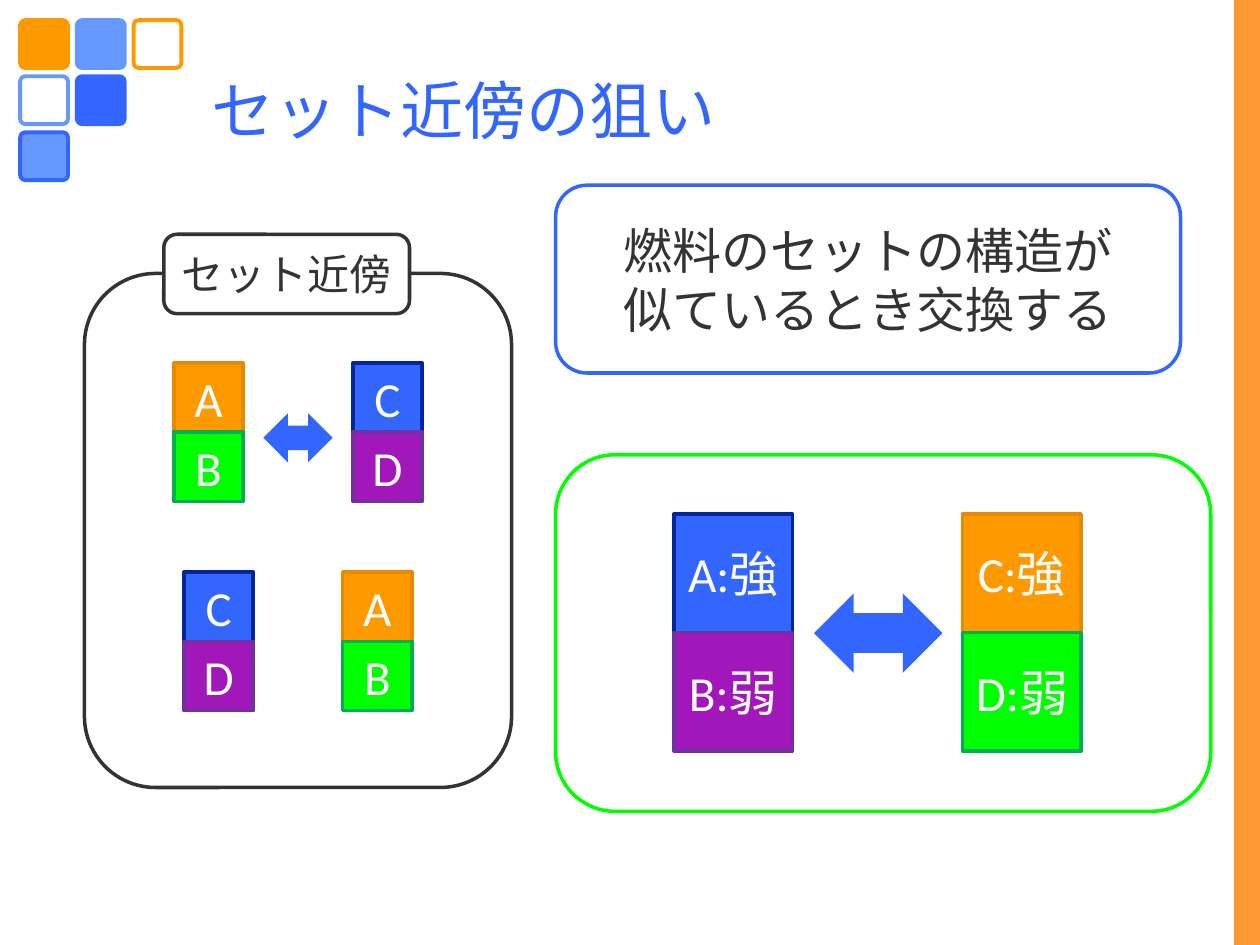
"""Build the slide that explains the aim of the set neighbourhood."""
from dataclasses import dataclass

from pptx import Presentation
from pptx.dml.color import RGBColor
from pptx.enum.shapes import MSO_SHAPE as Shape
from pptx.enum.text import MSO_ANCHOR as Anchor, PP_ALIGN as Align
from pptx.util import Inches, Pt


@dataclass(frozen=True)
class Theme:
    font: str = "Calibri"
    white: str = "FFFFFF"
    ink: str = "333333"
    blue: str = "3366FF"
    sky: str = "6699FF"
    orange: str = "FF9900"
    band: str = "FF9933"
    green: str = "00FF00"
    orange_pair: tuple = ("FF9900", "E78A00")
    green_pair: tuple = ("00FF00", "00B050")
    blue_pair: tuple = ("3366FF", "002699")
    purple_pair: tuple = ("A217B9", "7030A0")
    title_size: int = 36
    body_size: int = 28
    label_size: int = 24
    outline: float = 2
    tile_outline: float = 2.25


class SlideBuilder:
    def __init__(self, slide, theme):
        self.slide = slide
        self.theme = theme

    def add_text(self, shape, lines, size, color, align):
        frame = shape.text_frame
        frame.word_wrap = True
        frame.vertical_anchor = Anchor.MIDDLE
        paragraph = frame.paragraphs[0]
        paragraph.alignment = align
        for index, line in enumerate(lines):
            if index:
                paragraph.add_line_break()
            run = paragraph.add_run()
            run.text = line
            run.font.name = self.theme.font
            run.font.size = Pt(size)
            run.font.color.rgb = RGBColor.from_string(color)

    def title(self, box, text):
        shape = self.slide.shapes.add_textbox(*map(Inches, box))
        self.add_text(shape, [text], self.theme.title_size, self.theme.blue, Align.LEFT)

    def shape(self, kind, box, fill=None, line=None, width=None):
        shape = self.slide.shapes.add_shape(kind, *map(Inches, box))
        shape.shadow.inherit = False
        if fill:
            shape.fill.solid()
            shape.fill.fore_color.rgb = RGBColor.from_string(fill)
        else:
            shape.fill.background()
        if line:
            shape.line.color.rgb = RGBColor.from_string(line)
            shape.line.width = Pt(width or self.theme.outline)
        else:
            shape.line.fill.background()
        return shape

    def tile(self, column, row, fill, line):
        box = (0.16 + 0.45 * column, 0.16 + 0.445 * row, 0.38, 0.38)
        tile = self.shape(Shape.ROUNDED_RECTANGLE, box, fill, line, self.theme.tile_outline)
        tile.adjustments[0] = 0.11

    def panel(self, box, line, fill=None, lines=(), size=None):
        panel = self.shape(Shape.ROUNDED_RECTANGLE, box, fill, line)
        if lines:
            self.add_text(panel, lines, size, self.theme.ink, Align.CENTER)

    def stack(self, left, top, side, cells):
        for row, (text, (fill, line)) in enumerate(cells):
            cell = self.shape(Shape.RECTANGLE, (left, top + row * side, side, side), fill, line)
            self.add_text(cell, [text], self.theme.body_size, self.theme.white, Align.CENTER)

    def swap_arrow(self, box):
        self.shape(Shape.LEFT_RIGHT_ARROW, box, self.theme.blue)


def main():
    theme = Theme()
    presentation = Presentation()
    presentation.slide_width, presentation.slide_height = Inches(10), Inches(7.5)
    slide = presentation.slides.add_slide(presentation.slide_layouts[6])
    builder = SlideBuilder(slide, theme)

    tiles = [
        (0, 0, theme.orange, theme.orange),
        (1, 0, theme.sky, theme.sky),
        (2, 0, theme.white, theme.orange),
        (0, 1, theme.white, theme.sky),
        (1, 1, theme.blue, theme.blue),
        (0, 2, theme.sky, theme.blue),
    ]
    for tile in tiles:
        builder.tile(*tile)
    builder.shape(Shape.RECTANGLE, (9.8, 0, 0.2, 7.5), theme.band, theme.band, 0.75)
    builder.title((1.58, 0.33, 7.67, 1.08), "セット近傍の狙い")

    first_set = [("A", theme.orange_pair), ("B", theme.green_pair)]
    second_set = [("C", theme.blue_pair), ("D", theme.purple_pair)]
    builder.panel((0.67, 2.17, 3.39, 4.08), theme.ink)
    builder.panel((1.3, 1.86, 1.95, 0.63), theme.ink, theme.white,
                  ["セット近傍"], theme.label_size)
    for left, top, cells in [(1.38, 2.88, first_set), (2.8, 2.88, second_set),
                             (1.46, 4.54, second_set), (2.72, 4.54, first_set)]:
        builder.stack(left, top, 0.55, cells)
    builder.swap_arrow((2.09, 3.28, 0.55, 0.39))

    builder.panel((4.41, 3.61, 5.2, 2.83), theme.green, theme.white)
    builder.stack(5.35, 4.08, 0.94,
                  [("A:強", theme.blue_pair), ("B:弱", theme.purple_pair)])
    builder.stack(7.64, 4.08, 0.94,
                  [("C:強", theme.orange_pair), ("D:弱", theme.green_pair)])
    builder.swap_arrow((6.46, 4.71, 1.02, 0.63))

    builder.panel((4.41, 1.47, 4.96, 1.49), theme.blue, theme.white,
                  ["燃料のセットの構造が", "似ているとき交換する"], theme.body_size)
    presentation.save("out.pptx")


if __name__ == "__main__":
    main()
